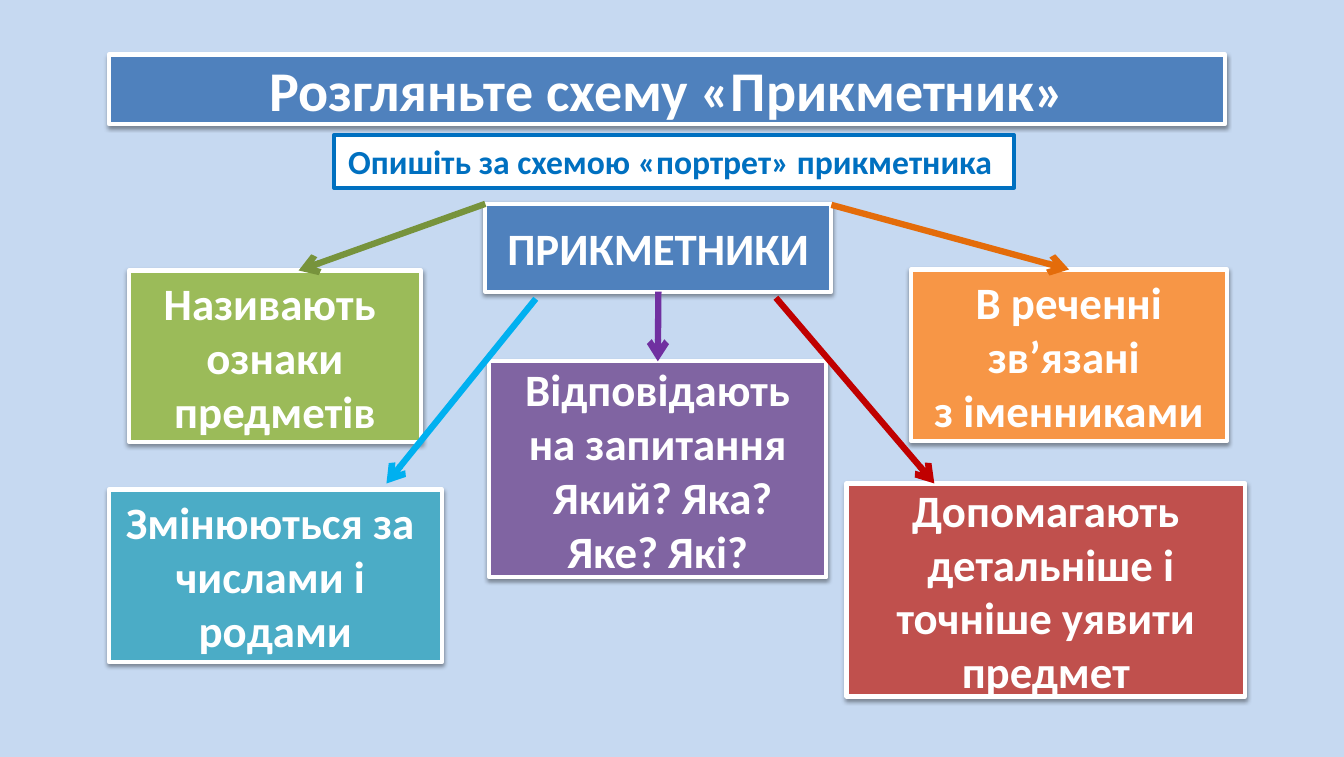
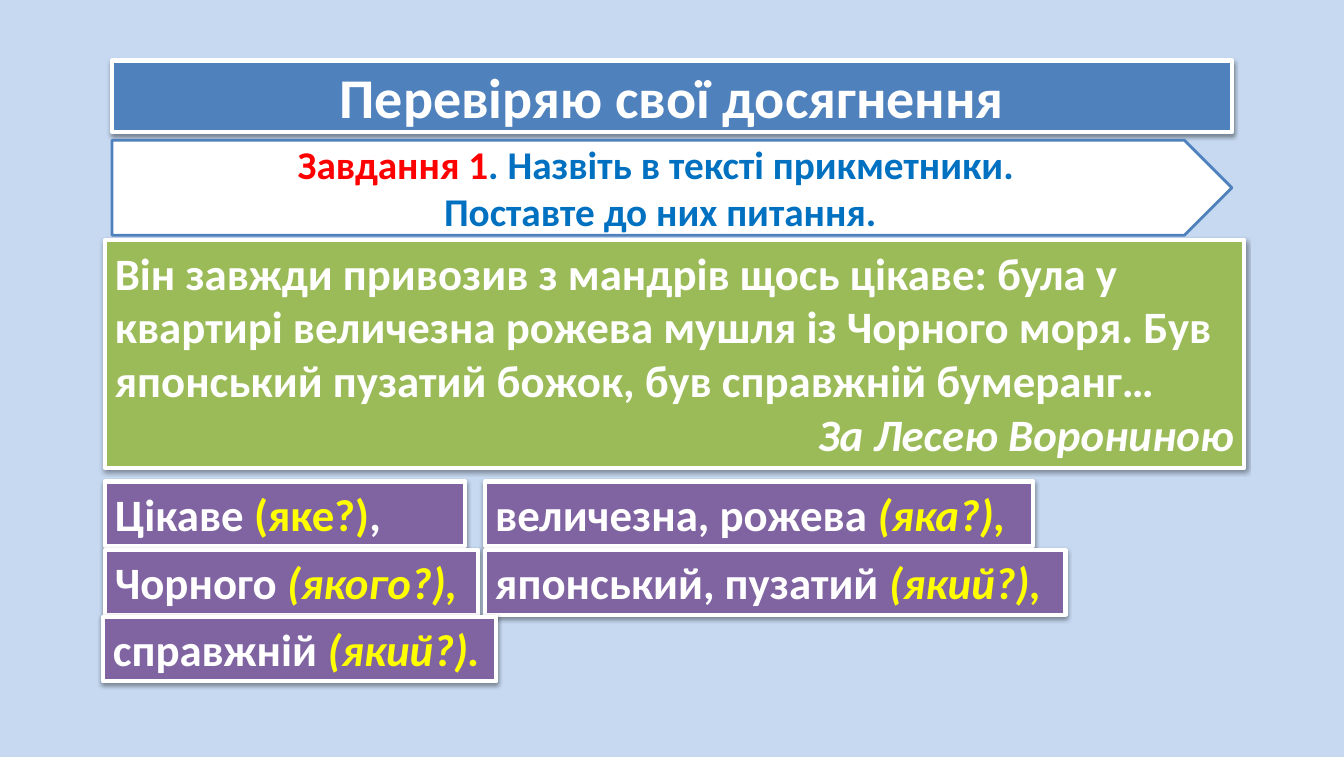
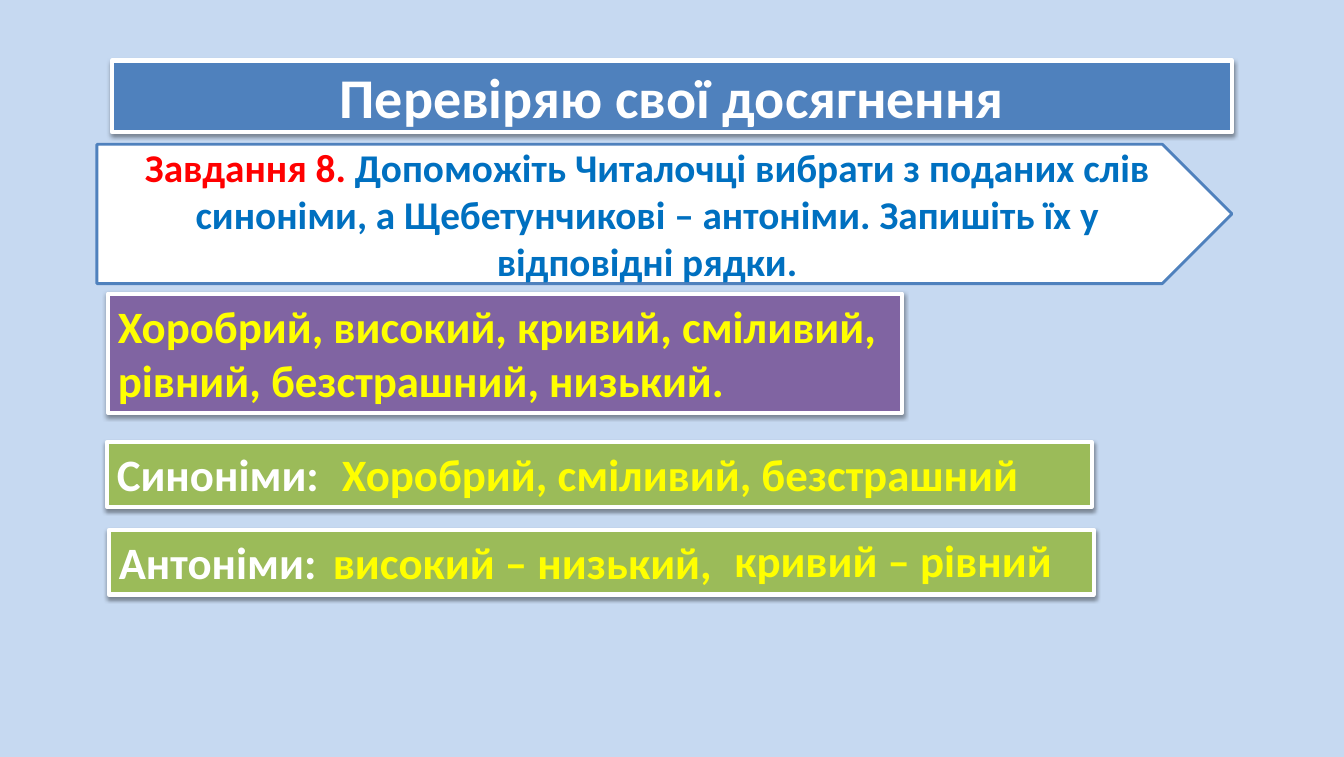
"""Builds three Ukrainian grammar slides about adjectives."""
from lxml.etree import SubElement
from pptx import Presentation
from pptx.dml.color import RGBColor
from pptx.enum.shapes import MSO_CONNECTOR, MSO_SHAPE
from pptx.enum.text import MSO_ANCHOR, MSO_AUTO_SIZE, PP_ALIGN
from pptx.oxml.ns import qn
from pptx.util import Emu, Pt

PX = 9144
FONT = "Calibri"
TITLE_ONLY = 5

SKY = RGBColor(0xC6, 0xD9, 0xF1)
WHITE = RGBColor(0xFF, 0xFF, 0xFF)
BLUE = RGBColor(0x4F, 0x81, 0xBD)
TASK_BLUE = RGBColor(0x00, 0x70, 0xC0)
RED = RGBColor(0xFF, 0x00, 0x00)
YELLOW = RGBColor(0xFF, 0xFF, 0x00)
GREEN = RGBColor(0x9B, 0xBB, 0x59)
PURPLE = RGBColor(0x80, 0x64, 0xA2)
ORANGE = RGBColor(0xF7, 0x96, 0x46)
TEAL = RGBColor(0x4B, 0xAC, 0xC6)
BRICK = RGBColor(0xC0, 0x50, 0x4D)
OLIVE_ARROW = RGBColor(0x77, 0x93, 0x3C)
ORANGE_ARROW = RGBColor(0xE4, 0x6C, 0x0A)
VIOLET_ARROW = RGBColor(0x70, 0x30, 0xA0)
CYAN_ARROW = RGBColor(0x00, 0xB0, 0xF0)
RED_ARROW = RGBColor(0xC0, 0x00, 0x00)


def px(*lengths):
    return [Emu(length * PX) for length in lengths]


def paint(shape, fill, line, width=3):
    shape.fill.solid()
    shape.fill.fore_color.rgb = fill
    shape.line.color.rgb = line
    shape.line.width = Pt(width)


def cast_shadow(shape):
    effects = SubElement(shape.element.spPr, qn("a:effectLst"))
    shadow = SubElement(effects, qn("a:outerShdw"), blurRad=str(Pt(3.1)),
                        dist=str(Pt(1.6)), dir="5400000", rotWithShape="0")
    colour = SubElement(shadow, qn("a:srgbClr"), val="000000")
    SubElement(colour, qn("a:alpha"), val="38000")


def write(shape, paragraphs, size=32, color=WHITE, align=PP_ALIGN.LEFT,
          anchor=MSO_ANCHOR.TOP, grow=False):
    """Each paragraph is a string, or a list of (text, colour, italic) runs."""
    frame = shape.text_frame
    frame.word_wrap = True
    frame.vertical_anchor = anchor
    frame.auto_size = MSO_AUTO_SIZE.SHAPE_TO_FIT_TEXT if grow else MSO_AUTO_SIZE.NONE
    for index, content in enumerate(paragraphs):
        paragraph = frame.add_paragraph() if index else frame.paragraphs[0]
        paragraph.alignment = align
        font = paragraph.font
        font.name, font.size, font.bold = FONT, Pt(size), True
        if isinstance(content, str):
            font.color.rgb = color
            paragraph.add_run().text = content
            continue
        for text, run_color, italic in content:
            run = paragraph.add_run()
            run.text = text
            run.font.color.rgb = run_color
            if italic:
                run.font.italic = True


def add_slide(prs, title, box):
    slide = prs.slides.add_slide(prs.slide_layouts[TITLE_ONLY])
    band = slide.shapes.title
    band.left, band.top, band.width, band.height = px(*box)
    paint(band, BLUE, WHITE)
    cast_shadow(band)
    write(band, [title], 40, align=PP_ALIGN.CENTER, anchor=MSO_ANCHOR.MIDDLE)
    return slide


def add_panel(slide, box, fill, paragraphs, **text_style):
    panel = slide.shapes.add_shape(MSO_SHAPE.RECTANGLE, *px(*box))
    paint(panel, fill, WHITE)
    cast_shadow(panel)
    write(panel, paragraphs, **text_style)
    return panel


def add_card(slide, box, fill, paragraphs):
    return add_panel(slide, box, fill, paragraphs,
                     align=PP_ALIGN.CENTER, anchor=MSO_ANCHOR.MIDDLE)


def add_task(slide, box, paragraphs):
    task = slide.shapes.add_shape(MSO_SHAPE.PENTAGON, *px(*box))
    task.shadow.inherit = False
    paint(task, WHITE, BLUE, 2)
    write(task, paragraphs, 28, TASK_BLUE, PP_ALIGN.CENTER, MSO_ANCHOR.MIDDLE)


def add_answer(slide, box, text, align=PP_ALIGN.LEFT):
    answer = slide.shapes.add_textbox(*px(*box))
    write(answer, [text], color=YELLOW, align=align, grow=True)


def add_arrow(slide, start, end, color):
    arrow = slide.shapes.add_connector(MSO_CONNECTOR.STRAIGHT, *px(*start, *end))
    arrow.line.color.rgb = color
    arrow.line.width = Pt(4.5)
    SubElement(arrow.line._get_or_add_ln(), qn("a:tailEnd"), type="arrow")
    SubElement(arrow._element.spPr, qn("a:effectLst"))
    return arrow


def build_scheme(prs):
    slide = add_slide(prs, "Розгляньте схему «Прикметник»", (108, 54, 1106, 69))
    prompt = slide.shapes.add_shape(MSO_SHAPE.RECTANGLE, *px(331, 134, 674, 52))
    prompt.shadow.inherit = False
    paint(prompt, WHITE, TASK_BLUE)
    write(prompt, ["Опишіть за схемою «портрет» прикметника "], 24, TASK_BLUE,
          PP_ALIGN.CENTER, grow=True)
    for banner in (slide.shapes.title, prompt):
        frame = banner.text_frame
        frame.margin_left, frame.margin_right = px(12, 12)
        frame.margin_top, frame.margin_bottom = px(6, 6)

    adjectives = add_card(slide, (481, 202, 343, 87), BLUE, ["ПРИКМЕТНИКИ"])
    add_card(slide, (128, 268, 289, 170), GREEN, ["Називають ", "ознаки предметів"])
    questions = add_card(slide, (485, 358, 334, 214), PURPLE,
                         ["Відповідають", "на запитання", " Який? Яка? Яке? Які?"])
    nouns = add_card(slide, (903, 267, 313, 170), ORANGE,
                     ["В реченні зв’язані ", "з іменниками"])
    add_card(slide, (108, 485, 330, 171), TEAL,
             ["Змінюються за ", "числами і ", "родами"])
    add_card(slide, (839, 479, 395, 211), BRICK,
             ["Допомагають", " детальніше і точніше уявити предмет"])

    add_arrow(slide, (481, 202), (296, 268), OLIVE_ARROW)
    to_nouns = add_arrow(slide, (824, 203), (1060, 267), ORANGE_ARROW)
    to_nouns.end_connect(nouns, 0)
    to_questions = add_arrow(slide, (652, 289), (652, 358), VIOLET_ARROW)
    to_questions.begin_connect(adjectives, 2)
    to_questions.end_connect(questions, 0)
    add_arrow(slide, (531, 296), (383, 479), CYAN_ARROW)
    add_arrow(slide, (769, 295), (926, 479), RED_ARROW)


def build_achievements(prs):
    return add_slide(prs, "Перевіряю свої досягнення", (111, 60, 1110, 71))


def build_first_task(prs):
    slide = build_achievements(prs)
    passage = add_panel(slide, (104, 238, 1129, 226), GREEN, [
        "Він завжди привозив з мандрів щось цікаве: була у квартирі величезна "
        "рожева мушля із Чорного моря. Був японський пузатий божок, "
        "був справжній бумеранг…",
        "За Лесею Ворониною"], grow=True)
    author = passage.text_frame.paragraphs[-1]
    author.alignment = PP_ALIGN.RIGHT
    author.font.italic = True
    add_task(slide, (111, 139, 1110, 94), [
        [("Завдання 1", RED, False),
         (". Назвіть в тексті прикметники. ", TASK_BLUE, False)],
        "Поставте до них питання."])
    answers = [
        (104, 477, 357, [("Цікаве ", WHITE, False), ("(яке?)", YELLOW, False),
                         (",", WHITE, False)]),
        (481, 477, 543, [("величезна, рожева ", WHITE, False), ("(яка?),", YELLOW, True)]),
        (104, 545, 370, [("Чорного ", WHITE, False), ("(якого?),", YELLOW, True)]),
        (481, 545, 575, [("японський, пузатий ", WHITE, False), ("(який?),", YELLOW, True)]),
        (102, 611, 390, [("справжній ", WHITE, False), ("(який?).", YELLOW, True)]),
    ]
    for left, top, width, runs in answers:
        add_panel(slide, (left, top, width, 64), PURPLE, [runs], grow=True)


def build_eighth_task(prs):
    slide = build_achievements(prs)
    add_task(slide, (96, 143, 1125, 138), [
        [("Завдання 8.", RED, False),
         (" Допоможіть Читалочці вибрати з поданих слів синоніми, "
          "а Щебетунчикові – антоніми. Запишіть їх у відповідні рядки.",
          TASK_BLUE, False)]])
    add_panel(slide, (106, 438, 976, 64), GREEN, ["Синоніми:"], grow=True)
    add_panel(slide, (107, 291, 787, 118), PURPLE,
              ["Хоробрий, високий, кривий, сміливий, рівний, безстрашний, низький."],
              color=YELLOW, grow=True)
    add_panel(slide, (108, 525, 976, 64), GREEN, ["Антоніми:"], grow=True)
    add_answer(slide, (320, 438, 709, 64), "Хоробрий, сміливий, безстрашний",
               PP_ALIGN.CENTER)
    add_answer(slide, (320, 525, 402, 64), "високий – низький,")
    add_answer(slide, (718, 523, 353, 64), "кривий – рівний")


def main():
    prs = Presentation()
    prs.slide_width, prs.slide_height = px(1332, 750)
    backdrop = prs.slide_master.background.fill
    backdrop.solid()
    backdrop.fore_color.rgb = SKY
    build_scheme(prs)
    build_first_task(prs)
    build_eighth_task(prs)
    prs.save("out.pptx")


if __name__ == "__main__":
    main()
